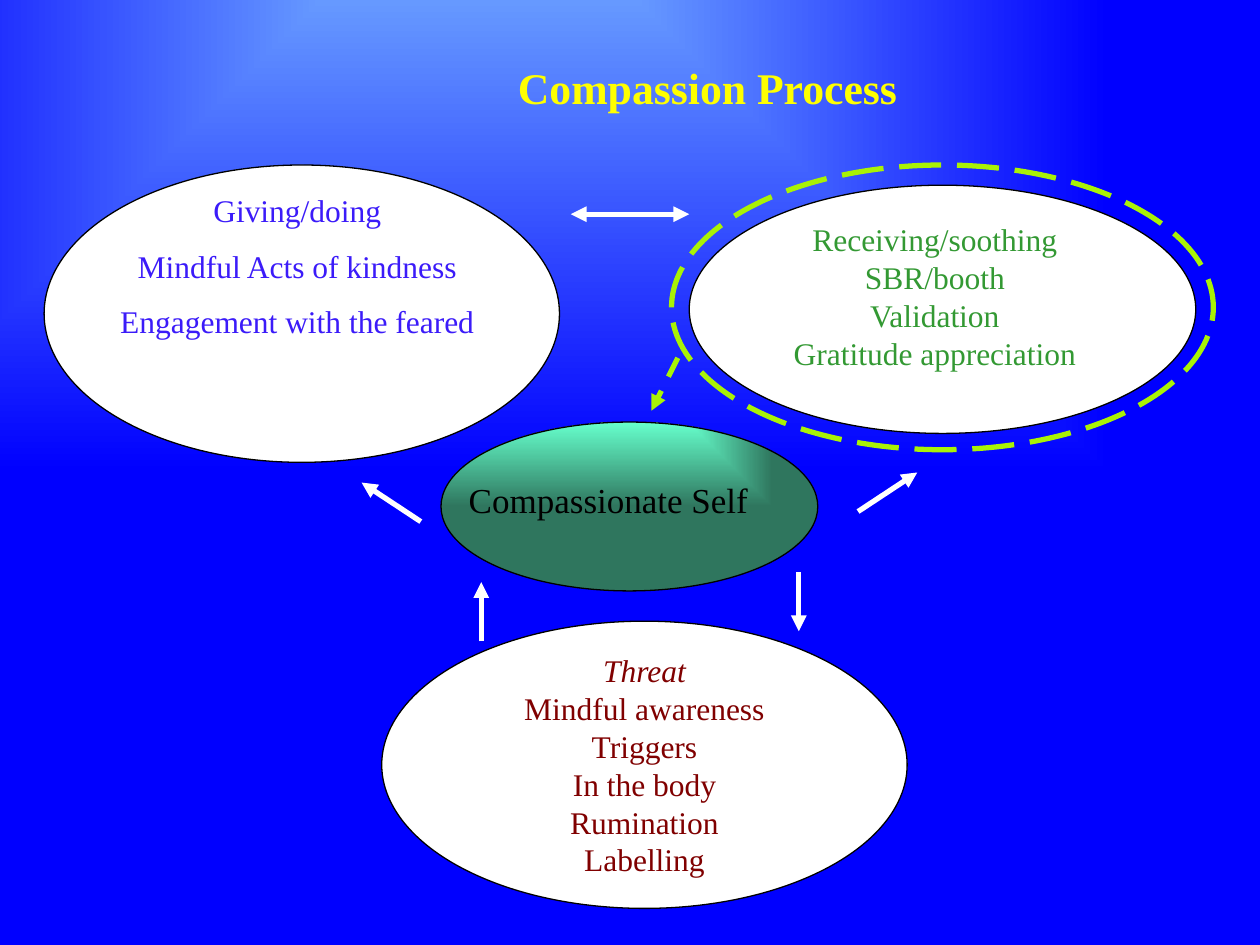
"""Build the Compassion Process slide: three linked ovals around the compassionate self."""
from lxml.etree import SubElement
from pptx import Presentation
from pptx.dml.color import RGBColor
from pptx.enum.dml import MSO_LINE
from pptx.enum.shapes import MSO_CONNECTOR, MSO_SHAPE
from pptx.enum.text import MSO_ANCHOR, PP_ALIGN
from pptx.oxml.ns import qn
from pptx.util import Inches, Pt

THEME = {
    "font": "Times New Roman",
    "title_size": 25, "body_size": 18, "self_size": 20,
    "title": "FFFF00", "giving": "3B1BF9", "receiving": "339933",
    "threat": "800000", "black": "000000", "white": "FFFFFF", "lime": "A9F206",
    "sky": ("6699FF", "0000FF"), "mint": ("66FFCC", "2F765E"),
    "outline": 0.75, "stroke": 3,
}
GRADIENT_FOCUS = {"l": "38000", "t": "-20000", "r": "62000", "b": "120000"}

TITLE = ("Compassion Process", (1.7, 0.44, 7.83, 0.5))
OVALS = [
    ((0.35, 1.31, 4.09, 2.36), "white"),
    ((5.47, 1.47, 4.02, 1.97), "white"),
    ((3.03, 4.93, 4.17, 2.28), "white"),
    ((3.5, 3.35, 2.99, 1.34), "mint"),
]
RING = (5.33, 1.31, 4.3, 2.26)
LABELS = [
    {"box": (0.81, 1.47, 3.1, 1.7), "color": "giving", "before": 10,
     "lines": ["Giving/doing", "Mindful Acts of kindness", "Engagement with the feared"]},
    {"box": (5.87, 1.7, 3.1, 1.26), "color": "receiving",
     "lines": ["Receiving/soothing", "SBR/booth", "Validation", "Gratitude appreciation"]},
    {"box": (4.07, 5.15, 2.09, 1.84), "color": "threat", "inset": 0,
     "anchor": MSO_ANCHOR.MIDDLE, "italic_lines": ["Threat"],
     "lines": ["Threat", "Mindful awareness", "Triggers", "In the body",
               "Rumination", "Labelling"]},
    {"box": (3.67, 3.75, 2.76, 0.41), "color": "black", "size": "self_size",
     "before": 12, "align": PP_ALIGN.LEFT, "lines": ["Compassionate Self"]},
]
ARROWS = [
    ((6.34, 4.54), (6.34, 5.01), ["tailEnd"]),
    ((3.82, 5.09), (3.82, 4.62), ["tailEnd"]),
    ((3.34, 4.14), (2.87, 3.83), ["tailEnd"]),
    ((6.81, 4.06), (7.28, 3.75), ["tailEnd"]),
    ((4.53, 1.7), (5.47, 1.7), ["headEnd", "tailEnd"]),
]
RING_ARROW = ((5.38, 2.84), (5.17, 3.26), ["tailEnd"])


def color(name):
    return RGBColor.from_string(THEME[name])


def inches(values):
    return [Inches(value) for value in values]


def set_all(target, values):
    for name, value in values.items():
        setattr(target, name, value)


def fill_gradient(fill, element, colors):
    fill.gradient()
    for stop, position, value in zip(fill.gradient_stops, (0, 1), colors):
        stop.position = position
        stop.color.rgb = RGBColor.from_string(value)
    gradient = element.find(".//" + qn("a:gradFill"))
    gradient.remove(gradient.find(qn("a:lin")))
    focus = SubElement(gradient, qn("a:path"), {"path": "rect"})
    SubElement(focus, qn("a:fillToRect"), GRADIENT_FOCUS)


def style_line(line, name, width, dash=None):
    line.color.rgb = color(name)
    line.width = Pt(width)
    if dash:
        line.dash_style = dash


def add_oval(slide, box, fill_name=None):
    shape = slide.shapes.add_shape(MSO_SHAPE.OVAL, *inches(box))
    shape.shadow.inherit = False
    if fill_name is None:
        shape.fill.background()
    elif isinstance(THEME[fill_name], tuple):
        fill_gradient(shape.fill, shape.element, THEME[fill_name])
    else:
        shape.fill.solid()
        shape.fill.fore_color.rgb = color(fill_name)
    style_line(shape.line, "black", THEME["outline"])
    return shape


def write_text(frame, lines, color_name, size="body_size", before=0, inset=0.05,
               align=PP_ALIGN.CENTER, anchor=MSO_ANCHOR.TOP, bold=False, italic_lines=()):
    margins = {f"margin_{side}": Inches(inset) for side in ("left", "top", "right", "bottom")}
    set_all(frame, {"word_wrap": True, "vertical_anchor": anchor, **margins})
    for index, line in enumerate(lines):
        paragraph = frame.add_paragraph() if index else frame.paragraphs[0]
        set_all(paragraph, {"alignment": align, "space_before": Pt(before)})
        run = paragraph.add_run()
        run.text = line
        set_all(run.font, {"name": THEME["font"], "size": Pt(THEME[size]),
                           "bold": bold, "italic": line in italic_lines})
        run.font.color.rgb = color(color_name)


def add_arrow(slide, start, end, heads, color_name="white", dash=None):
    arrow = slide.shapes.add_connector(MSO_CONNECTOR.STRAIGHT, *inches(start + end))
    style_line(arrow.line, color_name, THEME["stroke"], dash)
    properties = arrow.element.find(qn("p:spPr"))
    for head in heads:
        SubElement(properties.find(qn("a:ln")), qn(f"a:{head}"), {"type": "triangle"})
    SubElement(properties, qn("a:effectLst"))


def main():
    presentation = Presentation()
    presentation.slide_width, presentation.slide_height = inches((10, 7.5))
    slide = presentation.slides.add_slide(presentation.slide_layouts[5])
    fill_gradient(slide.background.fill, slide.element, THEME["sky"])

    text, box = TITLE
    title = slide.shapes.title
    set_all(title, dict(zip(("left", "top", "width", "height"), inches(box))))
    write_text(title.text_frame, [text], "title", size="title_size", inset=0,
               anchor=MSO_ANCHOR.MIDDLE, bold=True)

    for box, fill_name in OVALS:
        add_oval(slide, box, fill_name)
    for label in LABELS:
        options = {key: value for key, value in label.items() if key not in ("box", "color")}
        textbox = slide.shapes.add_textbox(*inches(label["box"]))
        write_text(textbox.text_frame, color_name=label["color"], **options)
    for arrow in ARROWS:
        add_arrow(slide, *arrow)

    ring = add_oval(slide, RING)
    style_line(ring.line, "lime", THEME["stroke"], MSO_LINE.LONG_DASH)
    add_arrow(slide, *RING_ARROW, color_name="lime", dash=MSO_LINE.DASH)
    presentation.save("out.pptx")


if __name__ == "__main__":
    main()
